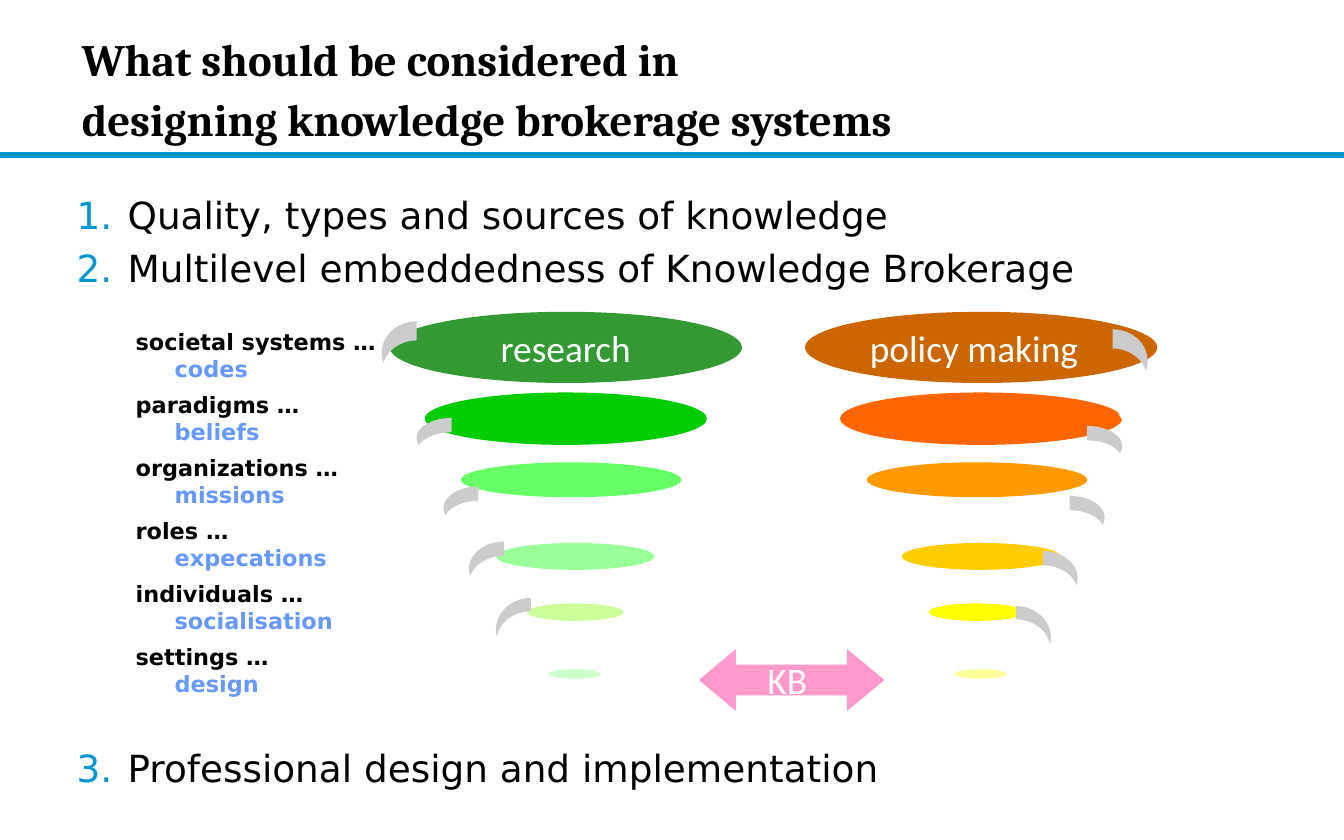
"""Build the slide on designing knowledge brokerage systems."""
from dataclasses import dataclass

from lxml import etree
from pptx import Presentation, util as u
from pptx.dml.color import RGBColor
from pptx.enum import shapes, text
from pptx.oxml.ns import qn


@dataclass(frozen=True)
class Theme:
    heading_font: str = "Cambria"
    body_font: str = "DejaVu Sans"
    shape_font: str = "Calibri"
    heading_size: int = 24
    body_size: int = 20
    label_size: int = 12
    ink: str = "000000"
    paper: str = "FFFFFF"
    accent: str = "0096D3"
    rule: str = "0C94B7"
    detail: str = "6699FF"
    bridge: str = "FF99CC"


THEME = Theme()
TITLE = ("What should be considered in", "designing knowledge brokerage systems")
LISTS = [
    (1.35, 1, ["Quality, types and sources of knowledge",
               "Multilevel embeddedness of Knowledge Brokerage"]),
    (5.46, 3, ["Professional design and implementation"]),
]
LEVELS = [
    ("societal systems …", "codes"),
    ("paradigms …", "beliefs"),
    ("organizations …", "missions"),
    ("roles …", "expecations"),
    ("individuals …", "socialisation"),
    ("settings …", "design"),
]
HEADS = ("research", "policy making")
HEAD_ALIGNMENTS = (text.PP_ALIGN.CENTER, text.PP_ALIGN.LEFT)
# top, width, height, then left and colour of research and policy making
ELLIPSES = [
    (2.32, 2.62, 0.53, (2.9, "339933"), (5.99, "CC6600")),
    (2.92, 2.1, 0.39, (3.16, "00CC00"), (6.25, "FF6600")),
    (3.44, 1.64, 0.26, (3.43, "66FF66"), (6.45, "FF9900")),
    (4.04, 1.18, 0.2, (3.69, "99FF99"), (6.71, "FFCC00")),
    (4.49, 0.72, 0.13, (3.92, "CCFF99"), (6.91, "FFFF00")),
    (4.98, 0.39, 0.07, (4.08, "CCFFCC"), (7.1, "FFFF99")),
]
WIDE, MEDIUM, SLIM = (0.55, 1.35, 0.33), (0.41, 1.02, 0.33), (0.38, 0.93, 0.33)
ARROWS = [
    (0.72, WIDE, (2.84, 2.39), (8.28, 2.45)),
    (0.47, MEDIUM, (3.1, 3.11), (8.09, 3.17)),
    (0.5, MEDIUM, (3.3, 3.62), (7.96, 3.69)),
    (0.59, MEDIUM, (3.49, 4.03), (7.76, 4.1)),
    (0.64, SLIM, (3.69, 4.45), (7.56, 4.51)),
]


def style(font, name, size, colour, bold=False):
    font.name, font.size, font.bold = name, u.Pt(size), bold
    font.color.rgb = RGBColor.from_string(colour)


def add_shape(slide, kind, box, fill, adjustments=()):
    shape = slide.shapes.add_shape(kind, *map(u.Inches, box))
    shape.shadow.inherit = False
    shape.fill.solid()
    shape.fill.fore_color.rgb = RGBColor.from_string(fill)
    shape.line.fill.background()
    for index, value in enumerate(adjustments):
        shape.adjustments[index] = value
    return shape


def write_in_shape(shape, words, alignment):
    frame = shape.text_frame
    frame.word_wrap = False
    frame.vertical_anchor = text.MSO_ANCHOR.MIDDLE
    paragraph = frame.paragraphs[0]
    paragraph.add_run().text = words
    paragraph.alignment = alignment
    style(paragraph.font, THEME.shape_font, THEME.body_size, THEME.paper)


def add_text(slide, box, side_inset=0):
    frame = slide.shapes.add_textbox(*map(u.Inches, box)).text_frame
    frame.word_wrap = True
    frame.margin_left = frame.margin_right = u.Inches(side_inset)
    return frame


def next_paragraph(frame, index):
    return frame.add_paragraph() if index else frame.paragraphs[0]


def indent(paragraph, margin, hanging):
    properties = paragraph._p.get_or_add_pPr()
    properties.set("marL", str(u.Inches(margin)))
    properties.set("indent", str(-u.Inches(hanging)))
    return properties


def add_title(slide):
    paragraph = add_text(slide, (0.51, 0.15, 7.48, 0.99), 0.1).paragraphs[0]
    paragraph.add_run().text = TITLE[0]
    paragraph.add_line_break()
    paragraph.add_run().text = TITLE[1]
    paragraph.line_spacing = 1.1
    style(paragraph.font, THEME.heading_font, THEME.heading_size, THEME.ink, True)


def add_numbered_list(slide, top, start, items):
    frame = add_text(slide, (0.37, top, 9.4, 0.1 + 0.4 * len(items)))
    for index, item in enumerate(items):
        paragraph = next_paragraph(frame, index)
        paragraph.add_run().text = item
        paragraph.line_spacing = 1.1
        paragraph.space_after = u.Pt(2)
        properties = indent(paragraph, 0.58, 0.38)
        colour = etree.SubElement(properties, qn("a:buClr"))
        etree.SubElement(colour, qn("a:srgbClr"), val=THEME.accent)
        etree.SubElement(properties, qn("a:buFont"), typeface=THEME.body_font)
        etree.SubElement(properties, qn("a:buAutoNum"),
                         type="arabicPeriod", startAt=str(start))
        style(paragraph.font, THEME.body_font, THEME.body_size, THEME.ink)


def add_levels(slide):
    frame = add_text(slide, (1.01, 2.39, 7.15, 3.86))
    for index, (level, detail) in enumerate(LEVELS):
        paragraph = next_paragraph(frame, index)
        paragraph.add_run().text = level
        paragraph.add_line_break()
        run = paragraph.add_run()
        run.text = detail
        run.font.color.rgb = RGBColor.from_string(THEME.detail)
        indent(paragraph, 0.29, 0.29)
        paragraph.space_before = u.Pt(2 if index else 0)
        paragraph.space_after = u.Pt(3)
        style(paragraph.font, THEME.body_font, THEME.label_size, THEME.ink, True)


def add_funnels(slide):
    kinds = shapes.MSO_SHAPE
    for row, (top, width, height, *sides) in enumerate(ELLIPSES):
        for side, (left, colour) in enumerate(sides):
            ellipse = add_shape(slide, kinds.OVAL, (left, top, width, height), colour)
            if row == 0:
                write_in_shape(ellipse, HEADS[side], HEAD_ALIGNMENTS[side])
    bridge = add_shape(slide, kinds.LEFT_RIGHT_ARROW, (5.2, 4.83, 1.38, 0.46),
                       THEME.bridge, (0.5, 0.6))
    write_in_shape(bridge, "KB ", text.PP_ALIGN.CENTER)
    for height, adjustments, *sides in ARROWS:
        for side, (left, top) in enumerate(sides):
            arrow = add_shape(slide, kinds.CURVED_RIGHT_ARROW,
                              (left, top, 0.26, height), THEME.paper, adjustments)
            if side:
                arrow.element.spPr.find(qn("a:xfrm")).set("flipH", "1")


def main():
    presentation = Presentation()
    presentation.slide_width, presentation.slide_height = u.Inches(10), u.Inches(6.25)
    slide = presentation.slides.add_slide(presentation.slide_layouts[6])
    rule = add_shape(slide, shapes.MSO_SHAPE.RECTANGLE, (0, 1.14, 10, 0.03), THEME.rule)
    rule.line.color.rgb = RGBColor.from_string(THEME.accent)
    rule.line.width = u.Pt(1)
    for top, start, items in LISTS:
        add_numbered_list(slide, top, start, items)
    add_levels(slide)
    add_title(slide)
    add_funnels(slide)
    presentation.save("out.pptx")


if __name__ == "__main__":
    main()
